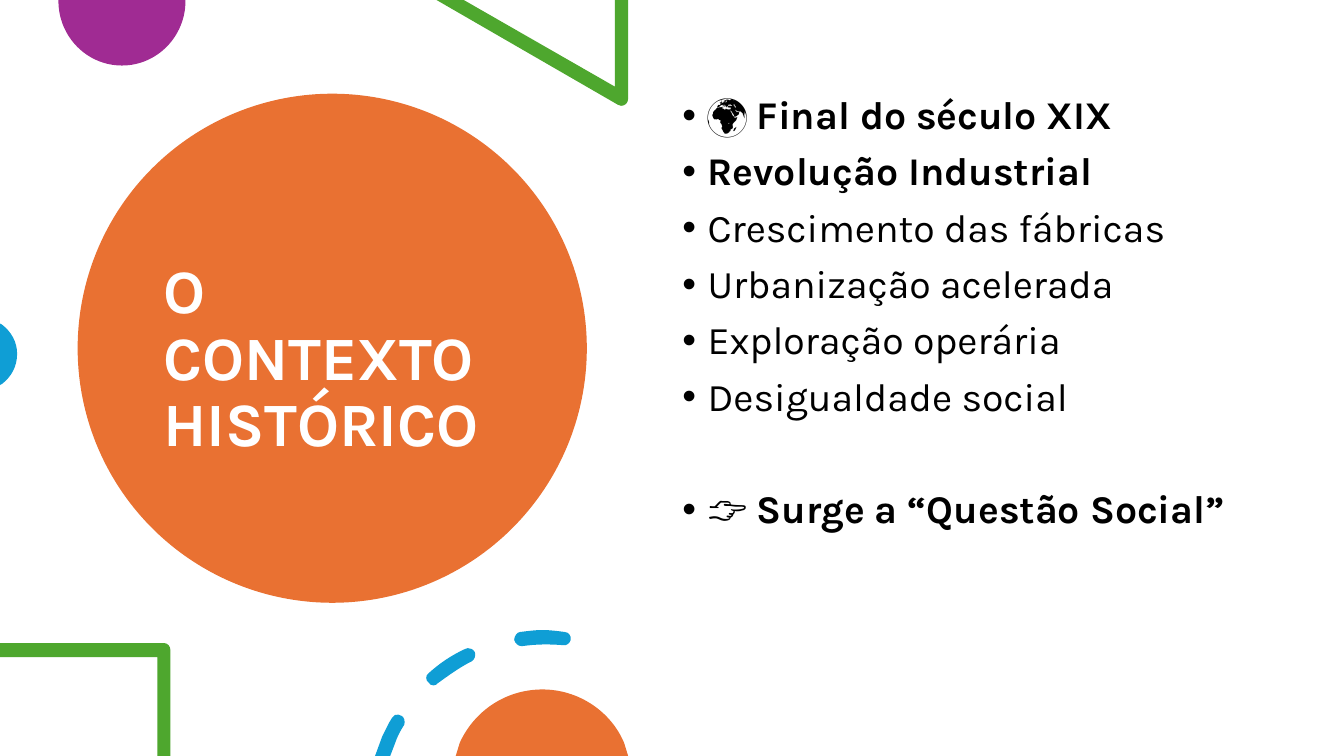
from lxml import etree
from pptx import Presentation
from pptx.dml.color import RGBColor
from pptx.enum.shapes import MSO_SHAPE
from pptx.enum.text import MSO_ANCHOR
from pptx.oxml.ns import qn
from pptx.util import Inches, Pt

OVAL = MSO_SHAPE.OVAL
MIDDLE = MSO_ANCHOR.MIDDLE

THEME = {
    "font": "Karla",
    "title_size": Pt(44),
    "topic_size": Pt(28),
    "orange": RGBColor.from_string("E97132"),
    "purple": RGBColor.from_string("A02B93"),
    "green": RGBColor.from_string("4EA72E"),
    "blue": RGBColor.from_string("0F9ED5"),
    "white": RGBColor.from_string("FFFFFF"),
    "black": RGBColor.from_string("000000"),
}

prs = Presentation()
prs.slide_width = Inches(13.33)
prs.slide_height = Inches(7.5)
slide = prs.slides.add_slide(prs.slide_layouts[6])
slide.background.fill.solid()
slide.background.fill.fore_color.rgb = THEME["white"]


def paint(shape, color):
    shape.shadow.inherit = False
    shape.fill.solid()
    shape.fill.fore_color.rgb = THEME[color]
    shape.line.fill.background()


def bend(shape, segments):
    lines = list(shape._element.iter(qn("a:lnTo")))
    for line, segment in zip(lines, segments):
        if len(segment) == 6:
            line.tag = qn("a:cubicBezTo")
            line.clear()
            for x, y in zip(segment[::2], segment[1::2]):
                point = etree.SubElement(line, qn("a:pt"))
                point.set("x", str(Inches(x) - shape.left))
                point.set("y", str(Inches(y) - shape.top))


title_disc = slide.shapes.add_shape(OVAL, Inches(0.77), Inches(0.93), Inches(5.05), Inches(5.05))
paint(title_disc, "orange")

title = slide.shapes.add_textbox(Inches(1.52), Inches(1.35), Inches(3.54), Inches(4.45)).text_frame
title.word_wrap = True
title.vertical_anchor = MIDDLE
title.text = "O CONTEXTO HISTÓRICO"
heading = title.paragraphs[0]
heading.line_spacing = 0.9
heading_run = heading.runs[0]
heading_run.font.name = THEME["font"]
heading_run.font.size = THEME["title_size"]
heading_run.font.bold = True
heading_run.font.color.rgb = THEME["white"]

purple_disc = [(1.84, 0), (0.58, 0), (0.58, 0.01),
               (0.58, 0.36, 0.86, 0.65, 1.21, 0.65),
               (1.56, 0.65, 1.84, 0.36, 1.84, 0.01)]
green_triangle = [(6.23, 0), (6.1, 0), (6.1, 0.86), (4.6, 0), (4.33, 0), (6.13, 1.04),
                  (6.14, 1.05, 6.15, 1.05, 6.16, 1.05),
                  (6.2, 1.05, 6.23, 1.02, 6.23, 0.98)]
blue_disc = [(0, 3.21), (0, 3.82), (0.02, 3.81),
             (0.11, 3.74, 0.17, 3.64, 0.17, 3.51),
             (0.17, 3.39, 0.11, 3.29, 0.02, 3.22)]
green_square = [(1.63, 6.38), (0, 6.38), (0, 6.52), (1.56, 6.52), (1.56, 7.5),
                (1.69, 7.5), (1.69, 6.45), (1.69, 6.41, 1.66, 6.38, 1.63, 6.38)]
lower_dash = [(3.95, 7.09), (3.93, 7.08, 3.9, 7.1, 3.89, 7.12),
              (3.85, 7.18, 3.82, 7.25, 3.79, 7.31), (3.72, 7.5), (3.87, 7.5), (3.92, 7.37),
              (3.94, 7.31, 3.97, 7.25, 4.01, 7.19),
              (4.02, 7.16, 4.01, 7.11, 3.98, 7.1),
              (3.97, 7.09, 3.96, 7.09, 3.95, 7.09)]
middle_dash = [(4.64, 6.43), (4.63, 6.43, 4.62, 6.43, 4.61, 6.44),
               (4.48, 6.5, 4.36, 6.58, 4.25, 6.68),
               (4.22, 6.7, 4.22, 6.75, 4.25, 6.77),
               (4.26, 6.79, 4.28, 6.8, 4.3, 6.8),
               (4.32, 6.8, 4.33, 6.79, 4.34, 6.78),
               (4.45, 6.7, 4.56, 6.62, 4.68, 6.56),
               (4.71, 6.54, 4.72, 6.5, 4.71, 6.47),
               (4.69, 6.44, 4.67, 6.43, 4.64, 6.43)]
upper_dash = [(5.38, 6.25), (5.31, 6.25, 5.24, 6.26, 5.16, 6.27),
              (5.13, 6.27, 5.1, 6.31, 5.1, 6.35),
              (5.11, 6.38, 5.14, 6.41, 5.17, 6.41),
              (5.18, 6.41, 5.18, 6.41, 5.18, 6.41),
              (5.32, 6.39, 5.45, 6.39, 5.58, 6.4),
              (5.62, 6.41, 5.65, 6.38, 5.66, 6.35),
              (5.67, 6.31, 5.64, 6.27, 5.6, 6.27),
              (5.53, 6.26, 5.45, 6.25, 5.38, 6.25)]
orange_disc = [(5.38, 6.84), (5.01, 6.84, 4.7, 7.06, 4.56, 7.37),
               (4.52, 7.5), (6.23, 7.5), (6.19, 7.37),
               (6.06, 7.06, 5.74, 6.84, 5.38, 6.84)]

decorations = [
    ("purple", [purple_disc]),
    ("green", [green_triangle]),
    ("blue", [blue_disc]),
    ("green", [green_square]),
    ("blue", [lower_dash, middle_dash, upper_dash]),
    ("orange", [orange_disc]),
]
for color, outlines in decorations:
    builder = None
    for outline in outlines:
        corners = [(Inches(segment[-2]), Inches(segment[-1])) for segment in outline]
        if builder is None:
            builder = slide.shapes.build_freeform(*corners[0])
        else:
            builder.move_to(*corners[0])
        builder.add_line_segments(corners[1:], close=True)
    decoration = builder.convert_to_shape()
    bend(decoration, [segment for outline in outlines for segment in outline[1:]])
    paint(decoration, color)

topics = [
    (0, [("🌍 Final do século XIX", True)]),
    (10, [("Revolução Industrial", True)]),
    (10, [("Crescimento das fábricas", False)]),
    (10, [("Urbanização acelerada", False)]),
    (10, [("Exploração operária", False)]),
    (10, [("Desigualdade social", False)]),
    (50, [("👉 ", False), ("Surge a “Questão Social”", True)]),
]
context = slide.shapes.add_textbox(Inches(6.67), Inches(0.9), Inches(5.75), Inches(5.35)).text_frame
context.word_wrap = True
for index, (gap, parts) in enumerate(topics):
    topic = context.add_paragraph() if index else context.paragraphs[0]
    topic.line_spacing = 0.9
    topic.space_before = Pt(gap)
    properties = topic._p.get_or_add_pPr()
    properties.set("marL", str(Inches(0.25)))
    properties.set("indent", str(-Inches(0.25)))
    etree.SubElement(properties, qn("a:buFont")).set("typeface", "Arial")
    etree.SubElement(properties, qn("a:buChar")).set("char", "•")
    for wording, bold in parts:
        run = topic.add_run()
        run.text = wording
        run.font.name = THEME["font"]
        run.font.size = THEME["topic_size"]
        run.font.bold = bold
        run.font.color.rgb = THEME["black"]

prs.save("out.pptx")
